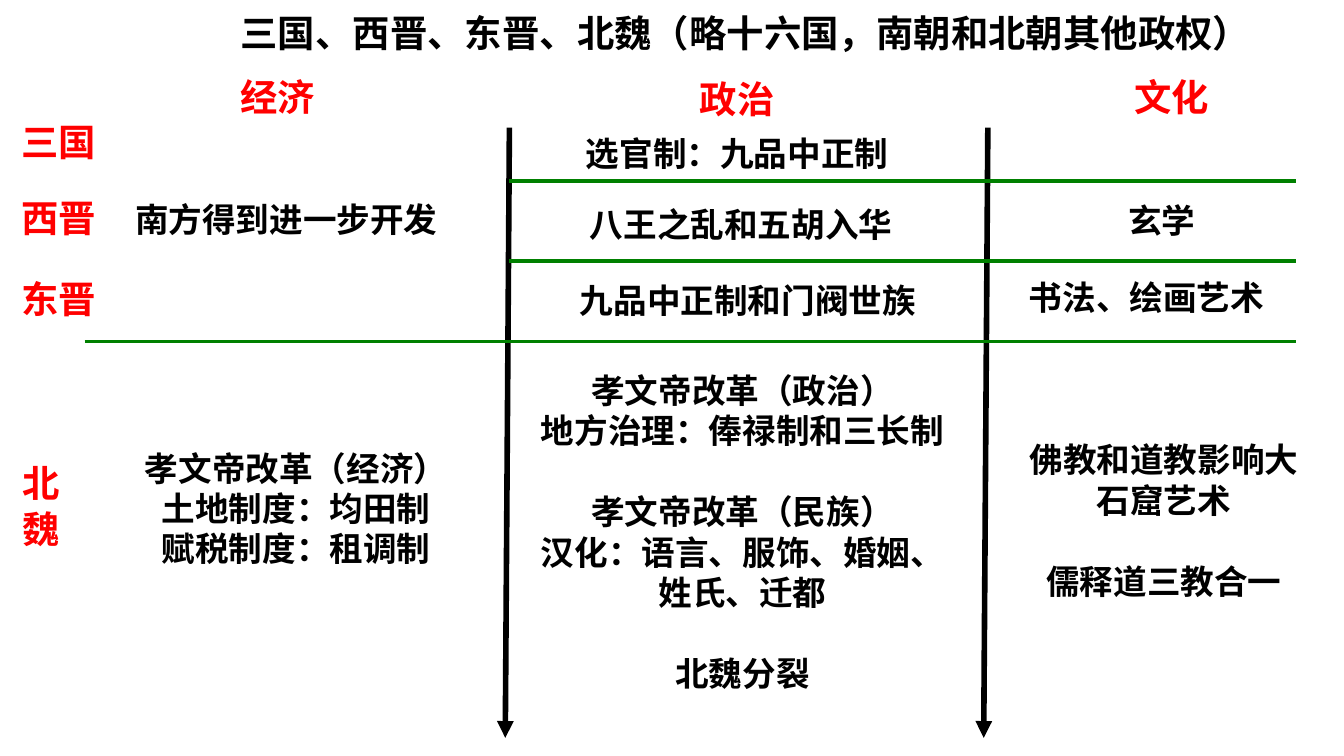
from pptx import Presentation
from pptx.dml.color import RGBColor
from pptx.enum import shapes, text
from pptx.oxml import ns
from pptx.util import Pt
from lxml import etree

BLACK = RGBColor(0x00, 0x00, 0x00)
RED = RGBColor(0xFF, 0x00, 0x00)
GREEN = RGBColor(0x00, 0x80, 0x00)
HEADING_FONT = "Noto Sans CJK SC"
BODY_FONT = "Calibri"
LINE_HEIGHT = 1.22  # of the text size

COLUMN_HEADINGS = [("经济", 121.7, 36), ("政治", 367.9, 36.7), ("文化", 600.5, 36)]
PERIODS = [("三国", 4.3, 59.8, 54.7), ("西晋", 4.3, 100.8, 54.7),
           ("东晋", 4.3, 144, 54.7), ("北魏", 5, 242.6, 34.6)]
# Box (left, top, width, height) and paragraphs; None leaves one line of space.
ECONOMY = [
    ((63.4, 103, 180, 28.8), ["南方得到进一步开发"]),
    ((69.8, 236.2, 177.8, 72.7),
     ["孝文帝改革（经济）", "土地制度：均田制", "赋税制度：租调制"]),
]
POLITICS = [
    ((306, 67.7, 177.8, 28.8), ["选官制：九品中正制"]),
    ((307.4, 105.8, 179.3, 28.8), ["八王之乱和五胡入华"]),
    ((299.5, 146.2, 202.3, 28.8), ["九品中正制和门阀世族"]),
    ((281.5, 194.4, 232.6, 181.4),
     ["孝文帝改革（政治）", "地方治理：俸禄制和三长制", None,
      "孝文帝改革（民族）", "汉化：语言、服饰、婚姻、", "姓氏、迁都", None,
      "北魏分裂"]),
]
CULTURE = [
    ((596.9, 103.7, 51.1, 28.8), ["玄学"]),
    ((542.9, 144.7, 142.6, 28.8), ["书法、绘画艺术"]),
    ((542.9, 231.8, 161.3, 94.3),
     ["佛教和道教影响大", "石窟艺术", None, "儒释道三教合一"]),
]


def place(shape, left, top, width, height):
    shape.left, shape.top = Pt(left), Pt(top)
    shape.width, shape.height = Pt(width), Pt(height)


def add_run(paragraph, words, size, font, color):
    run = paragraph.add_run()
    run.text = words
    run.font.size = Pt(size)
    run.font.bold = True
    run.font.name = font
    run.font.color.rgb = color
    properties = run.font._element
    properties.set("lang", "zh-CN")
    latin = properties.find(ns.qn("a:latin"))
    east_asian = etree.Element(ns.qn("a:ea"), typeface=font)
    latin.addnext(east_asian)


def write_heading(shape, words, color, wrap=False):
    frame = shape.text_frame
    frame.word_wrap = wrap
    frame.auto_size = text.MSO_AUTO_SIZE.NONE
    frame.vertical_anchor = text.MSO_ANCHOR.TOP
    paragraph = frame.paragraphs[0]
    paragraph.alignment = text.PP_ALIGN.LEFT
    paragraph.line_spacing = Pt(20 * LINE_HEIGHT)
    add_run(paragraph, words, 20, HEADING_FONT, color)


def add_title(slide, left, top, width, height):
    title = slide.shapes.title
    place(title, left, top, width, height)
    write_heading(title, "三国、西晋、东晋、北魏（略十六国，南朝和北朝其他政权）", BLACK)


def add_column_headings(slide, top):
    for words, left, offset in COLUMN_HEADINGS:
        box = slide.shapes.add_textbox(Pt(left), Pt(offset), Pt(54.7), Pt(top))
        write_heading(box, words, RED)


def add_period_labels(slide):
    for words, left, top, width in PERIODS:
        height = 31.7 if width > 40 else 55.4
        box = slide.shapes.add_textbox(Pt(left), Pt(top), Pt(width), Pt(height))
        write_heading(box, words, RED, wrap=True)


def add_column(slide, entries):
    for (left, top, width, height), lines in entries:
        box = slide.shapes.add_textbox(Pt(left), Pt(top), Pt(width), Pt(height))
        frame = box.text_frame
        frame.word_wrap = False
        space = 0
        for index, words in enumerate(lines):
            if words is None:
                space = 18 * LINE_HEIGHT
                continue
            paragraph = frame.add_paragraph() if index else frame.paragraphs[0]
            paragraph.alignment = text.PP_ALIGN.CENTER
            paragraph.space_before = Pt(space)
            add_run(paragraph, words, 18, BODY_FONT, BLACK)
            space = 0


def add_line(slide, start, end, color, width, arrow=False):
    line = slide.shapes.add_connector(
        shapes.MSO_CONNECTOR.STRAIGHT, *map(Pt, start + end))
    line.line.color.rgb = color
    line.line.width = Pt(width)
    if arrow:
        etree.SubElement(line.line._get_or_add_ln(), ns.qn("a:tailEnd"), type="triangle")
    etree.SubElement(line._element.spPr, ns.qn("a:effectLst"))


def add_column_arrows(slide, top, bottom):
    for x in (529.2, 272.9):
        add_line(slide, (x, top), (x - 2.2, bottom), BLACK, 3, arrow=True)


def add_period_rules(slide, right):
    for left, y in ((45.4, 182.9), (272.9, 139.7), (272.9, 96.8)):
        add_line(slide, (left, y), (right, y), GREEN, 2)


def main():
    presentation = Presentation()
    presentation.slide_width, presentation.slide_height = Pt(720), Pt(405)
    slide = presentation.slides.add_slide(presentation.slide_layouts[5])
    add_title(slide, 121.7, 1.4, 560.2, 31.7)
    add_column_headings(slide, 31.7)
    add_column_arrows(slide, 68.4, 395.3)
    for entries in (ECONOMY, POLITICS, CULTURE):
        add_column(slide, entries)
    add_period_rules(slide, 694.1)
    add_period_labels(slide)
    presentation.save("out.pptx")


if __name__ == "__main__":
    main()
